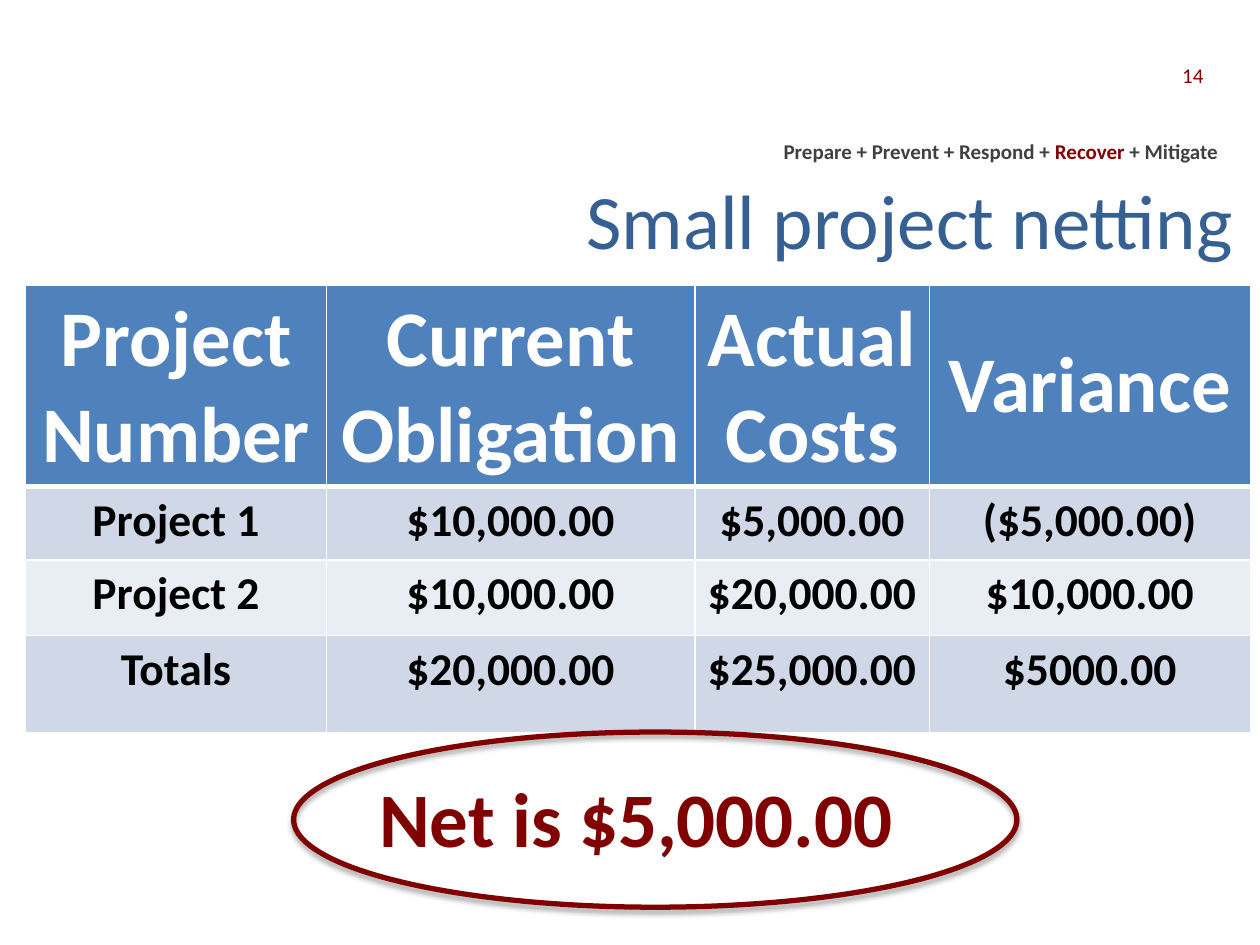
from lxml.etree import SubElement
from pptx import Presentation
from pptx.dml.color import RGBColor
from pptx.enum.shapes import MSO_SHAPE
from pptx.enum.text import MSO_ANCHOR, PP_ALIGN
from pptx.oxml.ns import qn
from pptx.util import Pt

HUES = {
    "white": "FFFFFF", "black": "000000", "gray": "404040",
    "red": "800000", "navy": "376092", "blue": "4F81BD",
    "band": "D0D8E8", "pale": "E9EDF4",
}


class Deck:
    font = "Calibri"

    def __init__(self, wide, high):
        self.file = Presentation()
        self.file.slide_width, self.file.slide_height = Pt(wide), Pt(high)
        self.slide = self.file.slides.add_slide(self.file.slide_layouts[6])

    def hue(self, name):
        return RGBColor.from_string(HUES[name])

    def style(self, font, size, hue, bold):
        font.name, font.size, font.bold = self.font, Pt(size), bold
        font.color.rgb = self.hue(hue)

    def text(self, spot, parts, size, align, bold=False, anchor=MSO_ANCHOR.TOP):
        frame = self.slide.shapes.add_textbox(*map(Pt, spot)).text_frame
        frame.word_wrap, frame.vertical_anchor = True, anchor
        para = frame.paragraphs[0]
        para.alignment = align
        for words, hue in parts:
            run = para.add_run()
            run.text = words
            self.style(run.font, size, hue, bold)

    def edge(self, cell, side, width):
        line = SubElement(cell._tc.get_or_add_tcPr(), qn(f"a:ln{side}"), w=str(Pt(width)))
        fill = SubElement(line, qn("a:solidFill"))
        SubElement(fill, qn("a:srgbClr"), val=HUES["white"])

    def table(self, left, top, wides, highs, rows, fills):
        spot = map(Pt, (left, top, sum(wides), sum(highs)))
        grid = self.slide.shapes.add_table(len(rows), len(wides), *spot).table
        for col, wide in zip(grid.columns, wides):
            col.width = Pt(wide)
        for r, (row, high, fill) in enumerate(zip(rows, highs, fills)):
            grid.rows[r].height = Pt(high)
            for c, words in enumerate(row):
                self.cell(grid.cell(r, c), words, r, fill)

    def cell(self, cell, words, row, fill):
        head = row == 0
        for side in "LRTB":
            thick = (side == "B" and head) or (side == "T" and row == 1)
            self.edge(cell, side, 3 if thick else 1)
        cell.fill.solid()
        cell.fill.fore_color.rgb = self.hue(fill)
        cell.vertical_anchor = MSO_ANCHOR.MIDDLE if head else MSO_ANCHOR.TOP
        cell.text_frame.text = words
        para = cell.text_frame.paragraphs[0]
        para.alignment = PP_ALIGN.CENTER
        size, hue = (45, "white") if head else (26, "black")
        self.style(para.runs[0].font, size, hue, True)

    def ring(self, spot, hue, width):
        oval = self.slide.shapes.add_shape(MSO_SHAPE.OVAL, *map(Pt, spot))
        oval.fill.background()
        oval.line.color.rgb, oval.line.width = self.hue(hue), Pt(width)
        oval.shadow.inherit = False
        shade = SubElement(
            oval._element.spPr.find(qn("a:effectLst")), qn("a:outerShdw"),
            blurRad=str(Pt(3.1)), dist=str(Pt(1.8)), dir="5400000", rotWithShape="0")
        tint = SubElement(shade, qn("a:srgbClr"), val=HUES["black"])
        SubElement(tint, qn("a:alpha"), val="35000")


def main():
    deck = Deck(720, 540)
    right, mid = PP_ALIGN.RIGHT, MSO_ANCHOR.MIDDLE
    motto = [("Prepare + Prevent + Respond + ", "gray"), ("Recover ", "red"), ("+ Mitigate", "gray")]
    deck.text((314, 75.6, 389, 21.6), motto, 12, right, bold=True)
    deck.text((64, 89.3, 648, 71.3), [("Small project netting", "navy")], 44, right, anchor=mid)
    rows = [
        ("Project Number", "Current Obligation", "Actual Costs", "Variance"),
        ("Project 1", "$10,000.00", "$5,000.00", "($5,000.00)"),
        ("Project 2", "$10,000.00", "$20,000.00", "$10,000.00"),
        ("Totals", "$20,000.00", "$25,000.00", "$5000.00"),
    ]
    deck.table(14.6, 162.8, (172, 210.5, 134, 183.5), (111, 42, 43.2, 55.4),
               rows, ("blue", "band", "pale", "band"))
    deck.text((406, 15.1, 288.8, 55.4), [("14", "red")], 12, right, anchor=mid)
    deck.text((14.4, 437, 698.4, 60.5), [("Net is $5,000.00", "red")], 44, PP_ALIGN.CENTER, bold=True)
    deck.ring((167.8, 418.3, 413.3, 100.1), "red", 3)
    deck.file.save("out.pptx")


if __name__ == "__main__":
    main()
